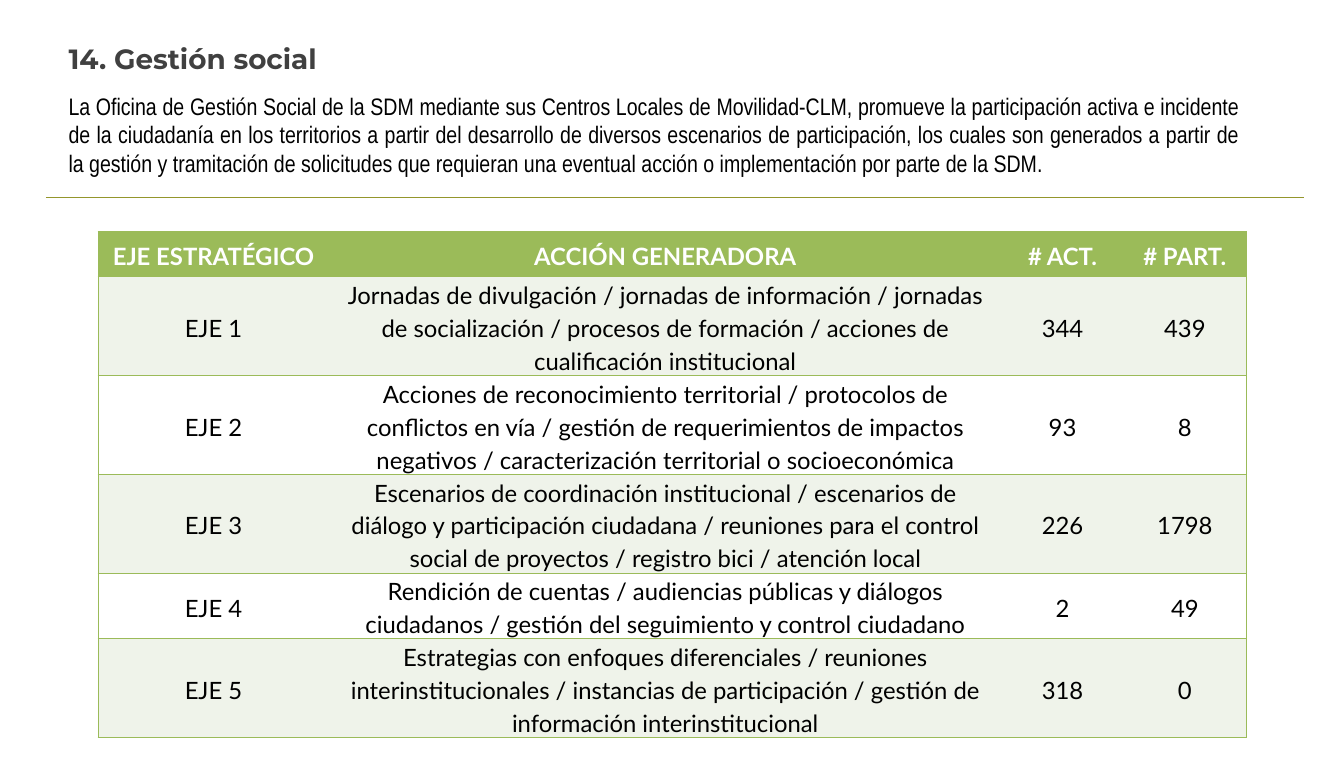
from lxml import etree
from pptx import Presentation
from pptx.dml.color import RGBColor
from pptx.enum.shapes import MSO_CONNECTOR
from pptx.enum.text import MSO_ANCHOR, PP_ALIGN
from pptx.oxml.ns import qn
from pptx.util import Inches, Pt

LEFT, CENTER, JUSTIFY = PP_ALIGN.LEFT, PP_ALIGN.CENTER, PP_ALIGN.JUSTIFY
MIDDLE = MSO_ANCHOR.MIDDLE
STRAIGHT = MSO_CONNECTOR.STRAIGHT

BLACK = RGBColor(0x00, 0x00, 0x00)
WHITE = RGBColor(0xFF, 0xFF, 0xFF)
CHARCOAL = RGBColor(0x40, 0x40, 0x40)
OLIVE = RGBColor(0x94, 0x96, 0x2C)
GREEN = RGBColor(0x9B, 0xBB, 0x59)
PALE_GREEN = RGBColor(0xEF, 0xF3, 0xEA)

SLIDE_WIDTH, SLIDE_HEIGHT = 18.79, 10.61
HEADER_HEIGHT, LINE_HEIGHT = 0.63, 0.46
COLUMN_WIDTHS = (3.23, 9.4, 1.71, 1.71)

TITLE = "14. Gestión social"
INTRO = (
    "La Oficina de Gestión Social de la SDM mediante sus Centros Locales de Movilidad-CLM, "
    "promueve la participación activa e incidente de la ciudadanía en los territorios a partir "
    "del desarrollo de diversos escenarios de participación, los cuales son generados a partir "
    "de la gestión y tramitación de solicitudes que requieran una eventual acción o "
    "implementación por parte de la SDM."
)
HEADINGS = ("EJE ESTRATÉGICO", "ACCIÓN GENERADORA", "# ACT.", "# PART.")
AXES = (
    ("EJE 1", "Jornadas de divulgación / jornadas de información / jornadas de socialización / "
     "procesos de formación / acciones de cualificación institucional", "344", "439"),
    ("EJE 2", "Acciones de reconocimiento territorial / protocolos de conflictos en vía / "
     "gestión de requerimientos de impactos negativos / caracterización territorial o "
     "socioeconómica", "93", "8"),
    ("EJE 3", "Escenarios de coordinación institucional / escenarios de diálogo y participación "
     "ciudadana / reuniones para el control social de proyectos / registro bici / atención local",
     "226", "1798"),
    ("EJE 4", "Rendición de cuentas / audiencias públicas y diálogos ciudadanos / gestión del "
     "seguimiento y control ciudadano", "2", "49"),
    ("EJE 5", "Estrategias con enfoques diferenciales / reuniones interinstitucionales / "
     "instancias de participación / gestión de información interinstitucional", "318", "0"),
)
LINES_PER_AXIS = (3, 3, 3, 2, 3)


def write(frame, text, font_name, size, color, align, bold=False):
    """Fill a text frame with one formatted paragraph and return it."""
    frame.text = text
    frame.word_wrap = True
    paragraph = frame.paragraphs[0]
    paragraph.alignment = align
    font = paragraph.runs[0].font
    font.name, font.size, font.bold = font_name, Pt(size), bold
    font.color.rgb = color
    return paragraph


def add_heading(slide, left, top, width):
    """Place the title, the introduction and the rule under them."""
    title = slide.shapes.add_textbox(
        Inches(left), Inches(top), Inches(12.47), Inches(0.57))
    write(title.text_frame, TITLE, "Montserrat", 28, CHARCOAL, LEFT, True)
    intro = slide.shapes.add_textbox(
        Inches(left), Inches(top + 0.7), Inches(width), Inches(1.31))
    write(intro.text_frame, INTRO, "Arial Narrow", 24, BLACK, JUSTIFY)
    rule_y = Inches(top + 2.23)
    rule = slide.shapes.add_connector(
        STRAIGHT, Inches(left - 0.22), rule_y, Inches(left + width + 0.81), rule_y)
    rule.line.color.rgb = OLIVE
    rule.line.width = Pt(0.75)
    etree.SubElement(rule._element.spPr, qn("a:effectLst"))


def set_borders(cell, visible_sides):
    """Draw green borders on the visible sides and clear the others."""
    properties = cell._tc.get_or_add_tcPr()
    for side in "LRTB":
        border = etree.SubElement(properties, qn(f"a:ln{side}"), w=str(Pt(1)))
        if side in visible_sides:
            fill = etree.SubElement(border, qn("a:solidFill"))
            etree.SubElement(fill, qn("a:srgbClr"), val=str(GREEN))
        else:
            etree.SubElement(border, qn("a:noFill"))


def style_cell(cell, text, fill, color, bold, visible_sides):
    """Write and format one table cell."""
    cell.margin_left = cell.margin_right = Inches(0.07)
    cell.margin_top = cell.margin_bottom = 0
    cell.vertical_anchor = MIDDLE
    paragraph = write(cell.text_frame, text, "Lato", 24, color, CENTER, bold)
    paragraph.line_spacing = 1.15
    paragraph.space_after = Pt(10)
    set_borders(cell, visible_sides)
    cell.fill.solid()
    cell.fill.fore_color.rgb = fill


def add_axes_table(slide, left, top):
    """Place the table of strategic axes with rows sized by their lines."""
    heights = [HEADER_HEIGHT] + [lines * LINE_HEIGHT for lines in LINES_PER_AXIS]
    rows = (HEADINGS,) + AXES
    last = len(HEADINGS) - 1
    table = slide.shapes.add_table(
        len(rows), len(HEADINGS), Inches(left), Inches(top),
        Inches(sum(COLUMN_WIDTHS)), Inches(sum(heights))).table
    for column, width in zip(table.columns, COLUMN_WIDTHS):
        column.width = Inches(width)
    for r, (values, height) in enumerate(zip(rows, heights)):
        table.rows[r].height = Inches(height)
        header = r == 0
        fill = GREEN if header else PALE_GREEN if r % 2 else WHITE
        for c, value in enumerate(values):
            sides = "TB" + ("L" if c == 0 else "R" if c == last else "")
            style_cell(table.cell(r, c), value, fill,
                       WHITE if header else BLACK, header, sides)


def main():
    """Build and save the slide."""
    deck = Presentation()
    deck.slide_width, deck.slide_height = Inches(SLIDE_WIDTH), Inches(SLIDE_HEIGHT)
    slide = deck.slides.add_slide(deck.slide_layouts[6])
    add_heading(slide, 0.86, 0.53, 16.56)
    add_axes_table(slide, 1.37, 3.24)
    deck.save("out.pptx")


if __name__ == "__main__":
    main()
